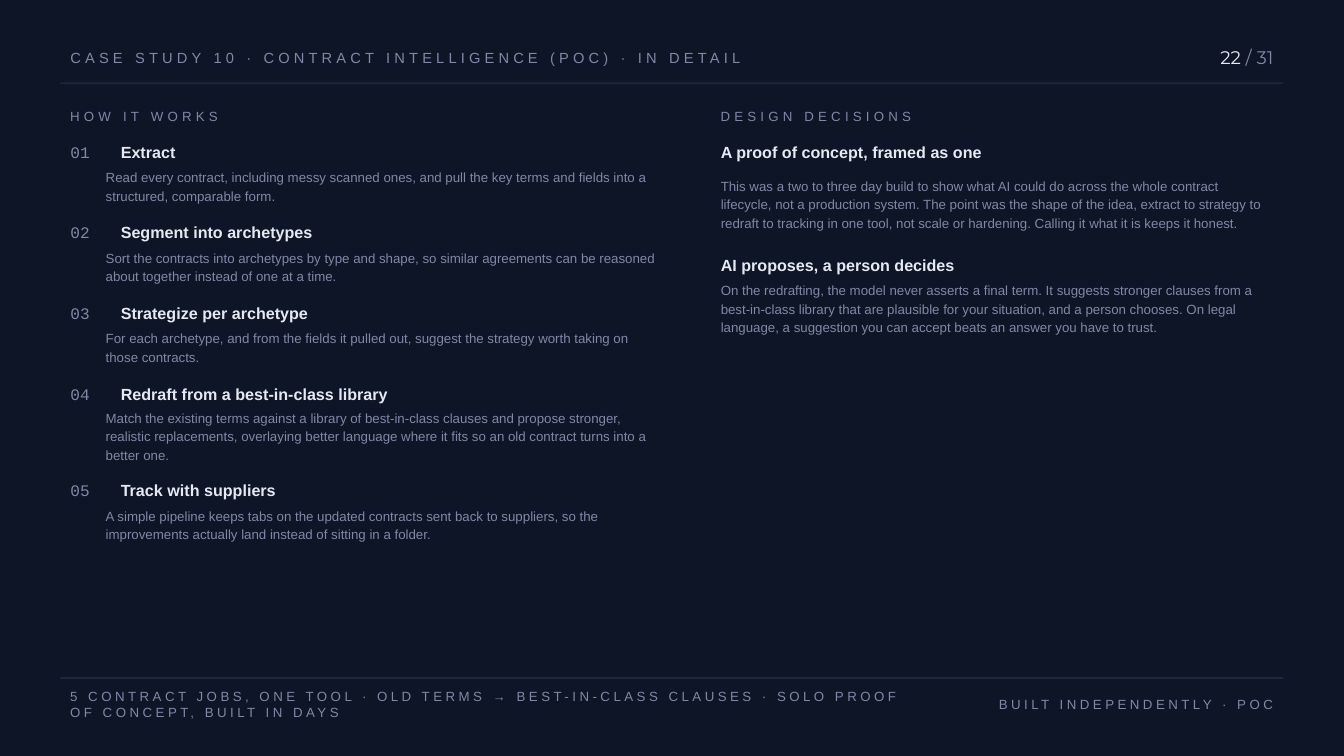
from dataclasses import dataclass

from pptx import Presentation
from pptx.dml.color import RGBColor
from pptx.enum.shapes import MSO_SHAPE
from pptx.enum.text import MSO_ANCHOR, MSO_AUTO_SIZE, PP_ALIGN
from pptx.oxml.ns import qn
from pptx.util import Cm, Pt
from lxml.etree import SubElement

NAVY, RULE, MUTED, LIGHT = "0D1526", "27314A", "8088A6", "E6E9F4"
LEFT, WIDTH, RIGHT_COLUMN = 1.52, 30.81, 17.91
NUMBER_TAB, DETAIL_INDENT = 0.97, 0.89


@dataclass
class Entry:
    heading: str
    detail: str
    before: float = 11.3
    between: float = 3.8


@dataclass
class Label:
    text: str
    left: float
    top: float
    width: float
    height: float
    spacing: float
    align: PP_ALIGN = PP_ALIGN.LEFT


STEPS = [
    Entry("Extract", "Read every contract, including messy scanned ones, and pull the key terms "
          "and fields into a structured, comparable form.", before=0),
    Entry("Segment into archetypes", "Sort the contracts into archetypes by type and shape, so "
          "similar agreements can be reasoned about together instead of one at a time."),
    Entry("Strategize per archetype", "For each archetype, and from the fields it pulled out, "
          "suggest the strategy worth taking on those contracts."),
    Entry("Redraft from a best-in-class library", "Match the existing terms against a library of "
          "best-in-class clauses and propose stronger, realistic replacements, overlaying better "
          "language where it fits so an old contract turns into a better one.", between=3),
    Entry("Track with suppliers", "A simple pipeline keeps tabs on the updated contracts sent back "
          "to suppliers, so the improvements actually land instead of sitting in a folder.",
          before=10.4),
]
DECISIONS = [
    Entry("A proof of concept, framed as one", "This was a two to three day build to show what AI "
          "could do across the whole contract lifecycle, not a production system. The point was "
          "the shape of the idea, extract to strategy to redraft to tracking in one tool, not "
          "scale or hardening. Calling it what it is keeps it honest.", before=0, between=9.7),
    Entry("AI proposes, a person decides", "On the redrafting, the model never asserts a final "
          "term. It suggests stronger clauses from a best-in-class library that are plausible for "
          "your situation, and a person chooses. On legal language, a suggestion you can accept "
          "beats an answer you have to trust.", before=15.2),
]
LABELS = [
    Label("HOW IT WORKS", LEFT, 2.59, 10.16, 0.66, 3),
    Label("DESIGN DECISIONS", RIGHT_COLUMN, 2.59, 10.16, 0.66, 3),
    Label("5 CONTRACT JOBS, ONE TOOL · OLD TERMS → BEST-IN-CLASS CLAUSES · SOLO PROOF OF CONCEPT, "
          "BUILT IN DAYS", LEFT, 17.37, 21.84, 0.76, 2.5),
    Label("BUILT INDEPENDENTLY · POC", 21.67, 17.37, 10.67, 0.76, 2.5, PP_ALIGN.RIGHT),
]


def color(value: str) -> RGBColor:
    return RGBColor.from_string(value)


def write(p, text: str, *, size: float = 9.5, font: str = "Arial", fill: str = MUTED,
          bold: bool = False, spacing: float = 0) -> None:
    r = p.add_run()
    r.text = text
    r.font.size = Pt(size)
    r.font.name = font
    r.font.bold = bold
    r.font.color.rgb = color(fill)
    if spacing:
        r._r.get_or_add_rPr().set("spc", str(int(spacing * 100)))


def place(sp, left: float, top: float, width: float, height: float,
          anchor: MSO_ANCHOR = MSO_ANCHOR.MIDDLE):
    sp.left, sp.top, sp.width, sp.height = Cm(left), Cm(top), Cm(width), Cm(height)
    tf = sp.text_frame
    tf.word_wrap = True
    tf.auto_size = MSO_AUTO_SIZE.NONE
    tf.vertical_anchor = anchor
    return tf


def add_text(s, left: float, top: float, width: float, height: float, align: PP_ALIGN):
    sp = s.shapes.add_textbox(0, 0, 0, 0)
    p = place(sp, left, top, width, height).paragraphs[0]
    p.alignment = align
    return p


def add_rule(s, top: float) -> None:
    sp = s.shapes.add_shape(MSO_SHAPE.RECTANGLE, Cm(LEFT), Cm(top), Cm(WIDTH), Cm(0.03))
    sp.shadow.inherit = False
    sp.fill.solid()
    sp.fill.fore_color.rgb = color(RULE)
    sp.line.fill.background()


def format_line(p, before: float, line: float, indent: float = 0, tab: float = 0) -> None:
    pPr = p._p.get_or_add_pPr()
    pPr.set("marL", str(Cm(indent)))
    pPr.set("indent", "0")
    SubElement(pPr, qn("a:buNone"))
    if tab:
        tabs = SubElement(pPr, qn("a:tabLst"))
        SubElement(tabs, qn("a:tab"), pos=str(Cm(tab)), algn="l")
    p.space_before = Pt(before)
    p.space_after = Pt(0)
    p.line_spacing = Pt(line)


def fill_column(tf, entries: list[Entry], numbered: bool) -> None:
    for number, entry in enumerate(entries, 1):
        p = tf.paragraphs[0] if number == 1 else tf.add_paragraph()
        format_line(p, entry.before, 16, tab=NUMBER_TAB if numbered else 0)
        if numbered:
            write(p, f"{number:02}\t", size=11.5, font="Courier New")
        write(p, entry.heading, size=11.5, fill=LIGHT, bold=True)
        p = tf.add_paragraph()
        format_line(p, entry.between, 13.25, indent=DETAIL_INDENT if numbered else 0)
        write(p, entry.detail)


def main() -> None:
    prs = Presentation()
    prs.slide_width, prs.slide_height = Cm(33.87), Cm(19.05)
    s = prs.slides.add_slide(prs.slide_layouts[3])
    s.background.fill.solid()
    s.background.fill.fore_color.rgb = color(NAVY)
    title, steps, decisions = s.placeholders

    p = place(title, LEFT, 1.07, 24.13, 0.76).paragraphs[0]
    p.alignment = PP_ALIGN.LEFT
    write(p, "CASE STUDY 10 · CONTRACT INTELLIGENCE (POC) · IN DETAIL", size=10.5, spacing=3)

    p = add_text(s, 28.78, 1.02, 3.56, 0.86, PP_ALIGN.RIGHT)
    write(p, "22", size=13, font="Montserrat", fill=LIGHT)
    write(p, " / 31", size=13, font="Montserrat")

    for top in (2.08, 17.07):
        add_rule(s, top)
    for label in LABELS:
        p = add_text(s, label.left, label.top, label.width, label.height, label.align)
        write(p, label.text, spacing=label.spacing)

    tf = place(steps, LEFT, 3.38, 15.37, 10.4, MSO_ANCHOR.TOP)
    fill_column(tf, STEPS, numbered=True)
    tf = place(decisions, RIGHT_COLUMN, 3.38, 14.35, 5.2, MSO_ANCHOR.TOP)
    fill_column(tf, DECISIONS, numbered=False)

    prs.save("out.pptx")


if __name__ == "__main__":
    main()
